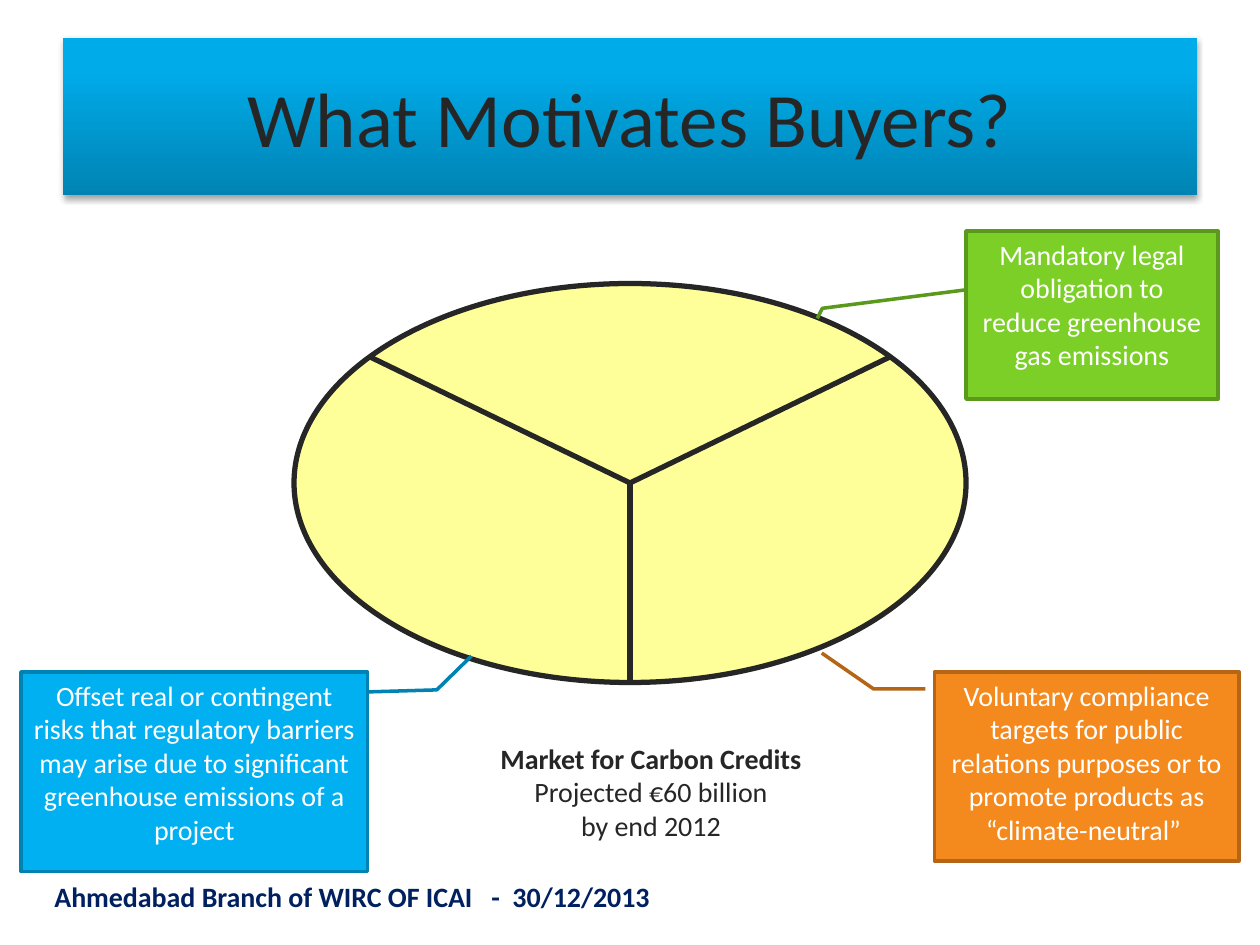
from copy import deepcopy

from lxml import etree
from pptx import Presentation
from pptx import util as u
from pptx.dml.color import RGBColor
from pptx.enum import shapes, text
from pptx.oxml.ns import qn

HUES = {
    "ink": "262626", "white": "FFFFFF", "navy": "002060", "cream": "FFFF99",
    "deep": "0083B3", "sky": "00ABE9", "top": "00ABEA", "shade": "000000",
    "green": "7BCF27", "moss": "5B991D", "blue": "00B0F0", "sea": "0082B2",
    "orange": "F4891E", "rust": "B56516",
}
KIND = shapes.MSO_SHAPE
MID = text.PP_ALIGN.CENTER
LEFT = text.PP_ALIGN.LEFT


def px(*nums):
    """Turn px into EMU at 96 px to the inch."""
    return [u.Emu(num * 9525) for num in nums]


def hue(name):
    """Look up a colour."""
    return RGBColor.from_string(HUES[name])


def edge(shape, name, width):
    """Set the colour and width of a line."""
    shape.line.color.rgb = hue(name)
    shape.line.width = u.Pt(width)


def block(home, kind, box, fill, rim, width):
    """Add a filled and outlined shape without a shadow."""
    shape = home.add_shape(kind, *px(*box))
    shape.shadow.inherit = False
    shape.fill.solid()
    shape.fill.fore_color.rgb = hue(fill)
    edge(shape, rim, width)
    return shape


def write(shape, lines, color, size=16, align=MID, anchor="TOP"):
    """Write (words, bold) lines as one paragraph."""
    frame = shape.text_frame
    frame.word_wrap = True
    frame.vertical_anchor = text.MSO_ANCHOR[anchor]
    para = frame.paragraphs[0]
    para.alignment = align
    for pos, (words, bold) in enumerate(lines):
        if pos:
            para.add_line_break()
        run = para.add_run()
        run.text = words
        run.font.name = "Calibri"
        run.font.size = u.Pt(size)
        run.font.bold = bold
        run.font.color.rgb = hue(color)


def title(slide, box, words):
    """Add the gradient title bar with its soft shadow."""
    bar = slide.shapes.add_shape(KIND.RECTANGLE, *px(*box))
    bar.line.fill.background()
    bar.fill.gradient()
    bar.fill.gradient_angle = 90
    props = bar._element.spPr
    stops = next(props.iter(qn("a:gsLst")))
    stops.append(deepcopy(stops[-1]))
    marks = [(0, "deep"), (0.8, "sky"), (1, "top")]
    for stop, (place, name) in zip(bar.fill.gradient_stops, marks):
        stop.position = place
        stop.color.rgb = hue(name)
    bar.shadow.inherit = False
    glow = etree.SubElement(
        props.find(qn("a:effectLst")), qn("a:outerShdw"),
        blurRad="40000", dist="23000", dir="5400000", rotWithShape="0")
    tint = etree.SubElement(glow, qn("a:srgbClr"), val=HUES["shade"])
    etree.SubElement(tint, qn("a:alpha"), val="35000")
    write(bar, [(words, False)], "ink", 44, anchor="MIDDLE")


def wheel(slide, box):
    """Add the ellipse split by three spokes."""
    left, top, wide, high = box
    group = slide.shapes.add_group_shape().shapes
    block(group, KIND.OVAL, box, "cream", "ink", 3)
    hub = (left + wide // 2, top + high // 2)
    rims = [(left + 58, top + 56), (left + wide - 58, top + 56),
            (hub[0], top + high)]
    for rim in rims:
        spoke = group.add_connector(
            shapes.MSO_CONNECTOR.STRAIGHT, *px(*rim, *hub))
        edge(spoke, "ink", 3)
        etree.SubElement(spoke._element.spPr, qn("a:effectLst"))


def callout(slide, box, words, fill, rim, bends):
    """Add a motive box with a bent leader."""
    note = block(slide.shapes, KIND.LINE_CALLOUT_2, box, fill, rim, 2)
    for pos, bend in enumerate(bends):
        note.adjustments[pos] = bend
    write(note, [(words, False)], "white")


def label(slide, box, lines, color, **look):
    """Add a plain text box."""
    write(slide.shapes.add_textbox(*px(*box)), lines, color, **look)


def main():
    """Build and save the slide."""
    deck = Presentation()
    deck.slide_width, deck.slide_height = px(960, 720)
    slide = deck.slides.add_slide(deck.slide_layouts[6])
    wheel(slide, (224, 216, 512, 304))
    title(slide, (48, 29, 864, 120), "What Motivates Buyers?")
    label(slide, (336, 560, 320, 86),
          [("Market for Carbon Credits", True),
           ("Projected €60 billion", False), ("by end 2012", False)], "ink")
    motives = [
        ((736, 176, 192, 128),
         "Mandatory legal obligation to reduce greenhouse gas emissions",
         "green", "moss", (0.35, 0, 0.46, -0.57, 0.52, -0.59)),
        ((16, 512, 264, 152),
         "Offset real or contingent risks that regulatory barriers may arise "
         "due to significant greenhouse emissions of a project",
         "blue", "sea", (0.1, 1, 0.09, 1.2, -0.08, 1.3)),
        ((712, 512, 232, 144),
         "Voluntary compliance targets for public relations purposes or to "
         "promote products as “climate-neutral” ",
         "orange", "rust", (0.09, -0.03, 0.09, -0.2, -0.1, -0.37)),
    ]
    for motive in motives:
        callout(slide, *motive)
    label(slide, (32, 664, 480, 38),
          [("Ahmedabad Branch of WIRC OF ICAI   -  30/12/2013", True)],
          "navy", align=LEFT, anchor="MIDDLE")
    deck.save("out.pptx")


if __name__ == "__main__":
    main()
